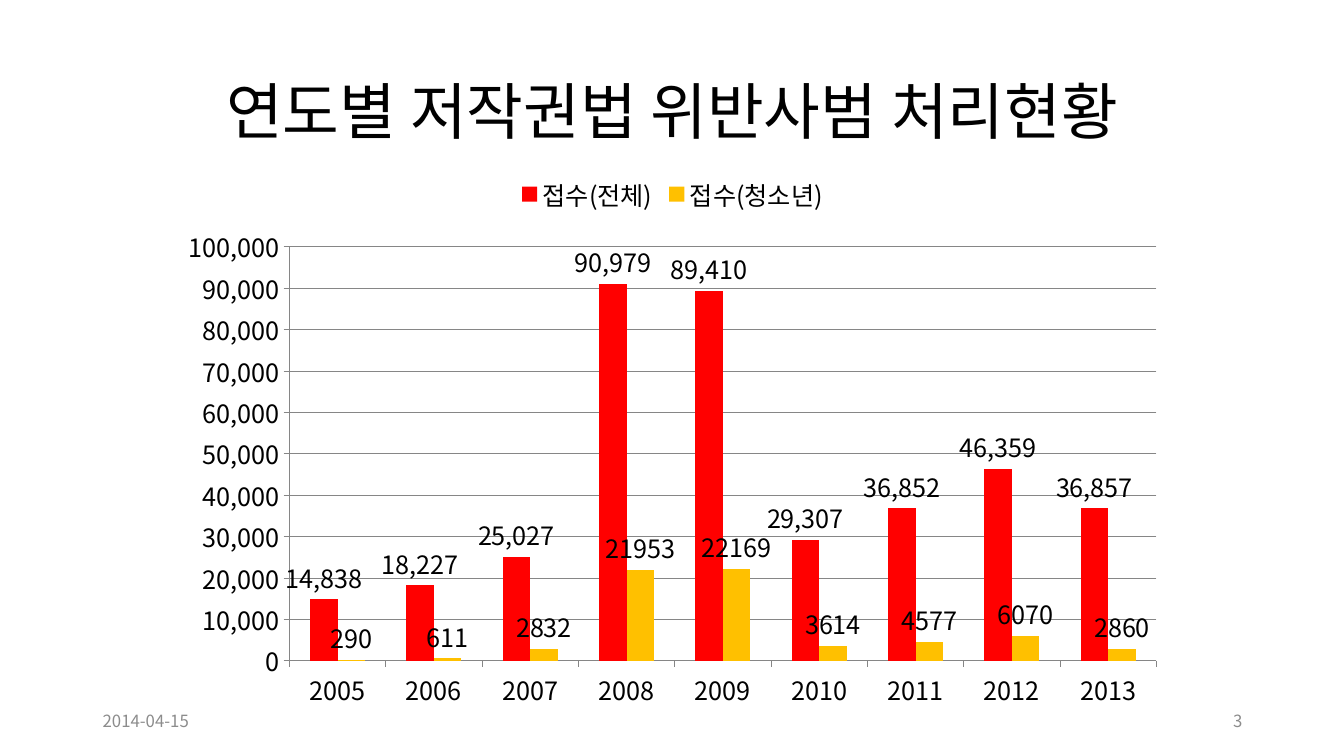
"""Build a slide charting copyright-law offence cases received per year."""
from dataclasses import dataclass

from lxml.etree import SubElement
from pptx import Presentation
from pptx.chart.data import CategoryChartData
from pptx.dml.color import RGBColor
from pptx.enum.chart import XL_CHART_TYPE as ChartType
from pptx.enum.chart import XL_LABEL_POSITION as LabelPosition
from pptx.enum.chart import XL_LEGEND_POSITION as LegendPosition
from pptx.enum.chart import XL_TICK_MARK as TickMark
from pptx.enum.text import MSO_ANCHOR as Anchor
from pptx.enum.text import PP_ALIGN as Align
from pptx.oxml.ns import qn
from pptx.util import Inches, Pt

TITLE = "연도별 저작권법 위반사범 처리현황"
YEARS = [str(year) for year in range(2005, 2014)]
CASES = [
    ("접수(전체)", "FF0000", "#,##0",
     (14838, 18227, 25027, 90979, 89410, 29307, 36852, 46359, 36857)),
    ("접수(청소년)", "FFC000", "General",
     (290, 611, 2832, 21953, 22169, 3614, 4577, 6070, 2860)),
]
FOOTERS = [("2014-04-15", 0.92, Align.LEFT), ("3", 9.42, Align.RIGHT)]


@dataclass(frozen=True)
class Theme:
    title_font: str = "Times New Roman"
    body_font: str = "Noto Sans CJK KR"
    text: str = "000000"
    muted: str = "8C8C8C"
    grid: str = "868686"
    title_size: int = 44
    chart_size: int = 18
    footer_size: int = 12


THEME = Theme()


def style_font(font, name, size, color):
    font.name = name
    font.size = Pt(size)
    font.bold = False
    font.color.rgb = RGBColor.from_string(color)


def place(shape, left, top, width, height):
    shape.left, shape.top = Inches(left), Inches(top)
    shape.width, shape.height = Inches(width), Inches(height)


def add_title(slide):
    title = slide.shapes.title
    place(title, 0.92, 0.56, 11.5, 1.15)
    title.text_frame.text = TITLE
    title.text_frame.vertical_anchor = Anchor.MIDDLE
    heading = title.text_frame.paragraphs[0]
    heading.alignment = Align.CENTER
    heading.line_spacing = 0.9
    style_font(heading.font, THEME.title_font, THEME.title_size, THEME.text)
    east_asian = SubElement(heading.font._element, qn("a:ea"))
    east_asian.set("typeface", THEME.body_font)


def add_footer(slide, text, left, alignment):
    footer = slide.shapes.add_textbox(Inches(left), Inches(6.95), Inches(3), Inches(0.4))
    frame = footer.text_frame
    frame.word_wrap = True
    frame.vertical_anchor = Anchor.MIDDLE
    frame.text = text
    line = frame.paragraphs[0]
    line.alignment = alignment
    style_font(line.font, THEME.body_font, THEME.footer_size, THEME.muted)


def add_case_chart(slide):
    data = CategoryChartData()
    data.categories = YEARS
    for name, _, number_format, counts in CASES:
        data.add_series(name, counts, number_format)
    chart = slide.shapes.add_chart(
        ChartType.COLUMN_CLUSTERED, Inches(1.67), Inches(1.62), Inches(10), Inches(5.51), data
    ).chart
    style_font(chart.font, THEME.body_font, THEME.chart_size, THEME.text)
    chart.has_title = False
    chart.has_legend = True
    chart.legend.position = LegendPosition.TOP
    chart.legend.include_in_layout = False

    grid_color = RGBColor.from_string(THEME.grid)
    counts_axis = chart.value_axis
    counts_axis.minimum_scale, counts_axis.maximum_scale = 0, 100000
    counts_axis.major_unit = 10000
    counts_axis.has_major_gridlines = True
    counts_axis.tick_labels.number_format = "#,##0"
    counts_axis.tick_labels.number_format_is_linked = False
    for axis in (chart.category_axis, counts_axis):
        axis.major_tick_mark = TickMark.OUTSIDE
        axis.minor_tick_mark = TickMark.NONE
    for line in (chart.category_axis.format.line, counts_axis.format.line,
                 counts_axis.major_gridlines.format.line):
        line.color.rgb = grid_color
        line.width = Pt(0.75)

    plot = chart.plots[0]
    plot.gap_width = 150
    plot.overlap = 0
    plot.vary_by_categories = False
    for columns, (_, color, number_format, _) in zip(plot.series, CASES):
        columns.format.fill.solid()
        columns.format.fill.fore_color.rgb = RGBColor.from_string(color)
        columns.invert_if_negative = False
        labels = columns.data_labels
        labels.show_value = True
        labels.position = LabelPosition.OUTSIDE_END
        labels.number_format = number_format
        labels.number_format_is_linked = False


def main():
    deck = Presentation()
    deck.slide_width, deck.slide_height = Inches(13.33), Inches(7.5)
    slide = deck.slides.add_slide(deck.slide_layouts[5])
    add_title(slide)
    for footer in FOOTERS:
        add_footer(slide, *footer)
    add_case_chart(slide)
    deck.save("out.pptx")


if __name__ == "__main__":
    main()
